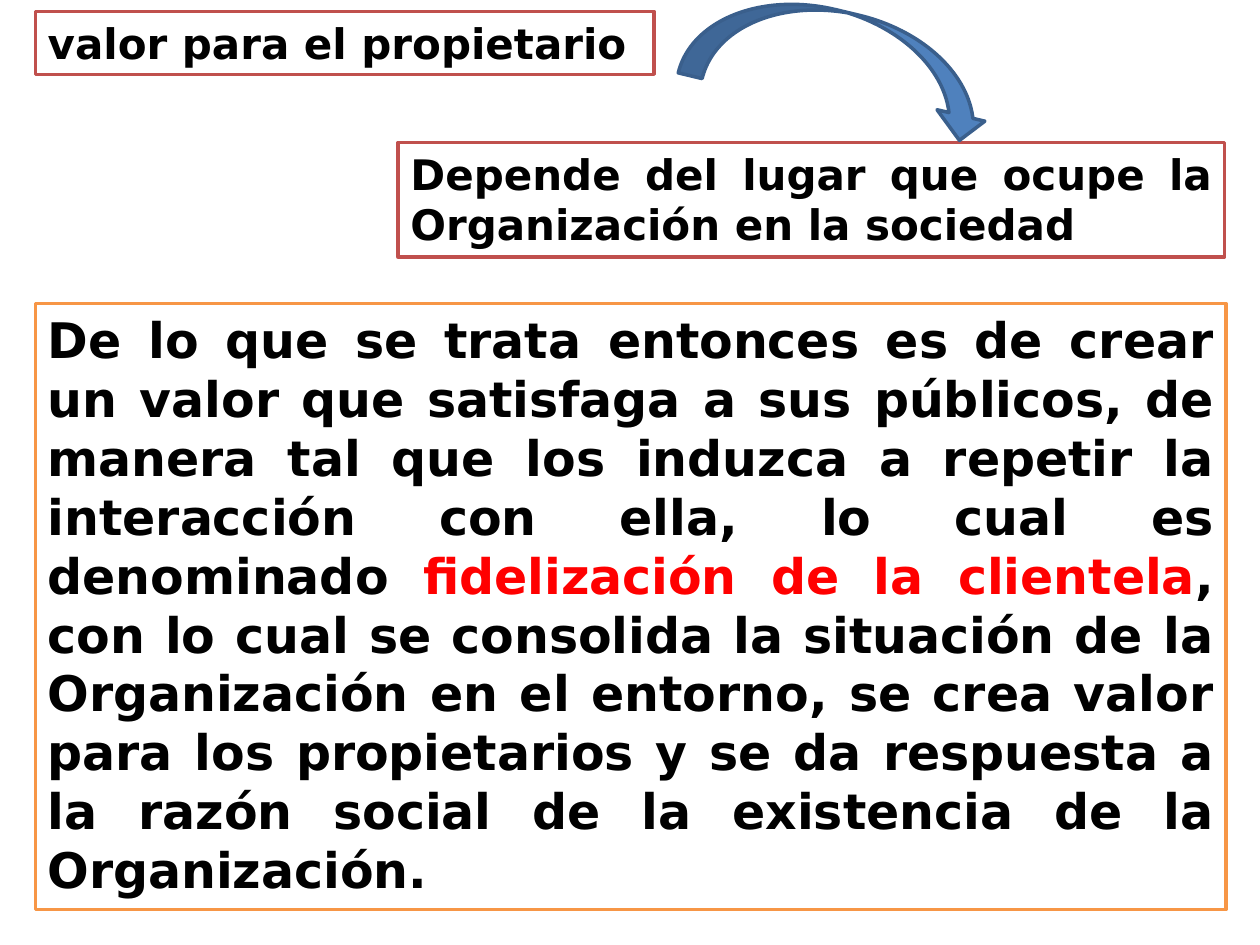
from dataclasses import dataclass

from pptx import Presentation
from pptx.dml.color import RGBColor
from pptx.enum.shapes import MSO_SHAPE
from pptx.enum.text import MSO_ANCHOR, MSO_AUTO_SIZE, PP_ALIGN
from pptx.util import Inches, Pt


@dataclass(frozen=True)
class Theme:
    font: str = "DejaVu Sans"
    text: str = "000000"
    accent: str = "FF0000"
    paper: str = "FFFFFF"
    red: str = "C0504D"
    orange: str = "F79646"
    blue: str = "4F81BD"
    dark_blue: str = "3A5F8C"
    heading_size: int = 24
    body_size: int = 28
    line_width: int = 2


THEME = Theme()


def add_outlined(s, kind, box, fill, line):
    sp = s.shapes.add_shape(kind, *map(Inches, box))
    sp.shadow.inherit = False
    sp.fill.solid()
    sp.fill.fore_color.rgb = RGBColor.from_string(fill)
    sp.line.color.rgb = RGBColor.from_string(line)
    sp.line.width = Pt(THEME.line_width)
    return sp


def add_text_frame(s, box, parts, line, size, align=PP_ALIGN.JUSTIFY, wrap=True):
    sp = add_outlined(s, MSO_SHAPE.RECTANGLE, box, THEME.paper, line)
    tf = sp.text_frame
    tf.word_wrap = wrap
    tf.auto_size = MSO_AUTO_SIZE.SHAPE_TO_FIT_TEXT
    tf.vertical_anchor = MSO_ANCHOR.TOP
    p = tf.paragraphs[0]
    p.alignment = align
    for text, color in parts:
        r = p.add_run()
        r.text = text
        r.font.name = THEME.font
        r.font.size = Pt(size)
        r.font.bold = True
        r.font.color.rgb = RGBColor.from_string(color)


def add_curved_arrow(s, box, rotation):
    sp = add_outlined(s, MSO_SHAPE.CURVED_DOWN_ARROW, box, THEME.blue, THEME.dark_blue)
    sp.rotation = rotation


def main():
    prs = Presentation()
    prs.slide_width, prs.slide_height = Inches(10), Inches(7.5)
    s = prs.slides.add_slide(prs.slide_layouts[6])

    add_text_frame(
        s, (0.28, 0.09, 4.91, 0.5),
        [("valor para el propietario", THEME.text)],
        THEME.red, THEME.heading_size, PP_ALIGN.LEFT, wrap=False,
    )
    add_text_frame(
        s, (3.16, 1.13, 6.56, 0.91),
        [("Depende del lugar que ocupe la Organización en la sociedad", THEME.text)],
        THEME.red, THEME.heading_size,
    )
    add_text_frame(
        s, (0.28, 2.41, 9.45, 4.81),
        [
            ("De lo que se trata entonces es de crear un valor que satisfaga a sus "
             "públicos, de manera tal que los induzca a repetir la interacción con "
             "ella, lo cual es denominado ", THEME.text),
            ("fidelización de la clientela", THEME.accent),
            (", con lo cual se consolida la situación de la Organización en el "
             "entorno, se crea valor para los propietarios y se da respuesta a la "
             "razón social de la existencia de la Organización.", THEME.text),
        ],
        THEME.orange, THEME.body_size,
    )
    add_curved_arrow(s, (5.44, 0.1, 2.49, 0.78), 13.5)

    prs.save("out.pptx")


if __name__ == "__main__":
    main()
